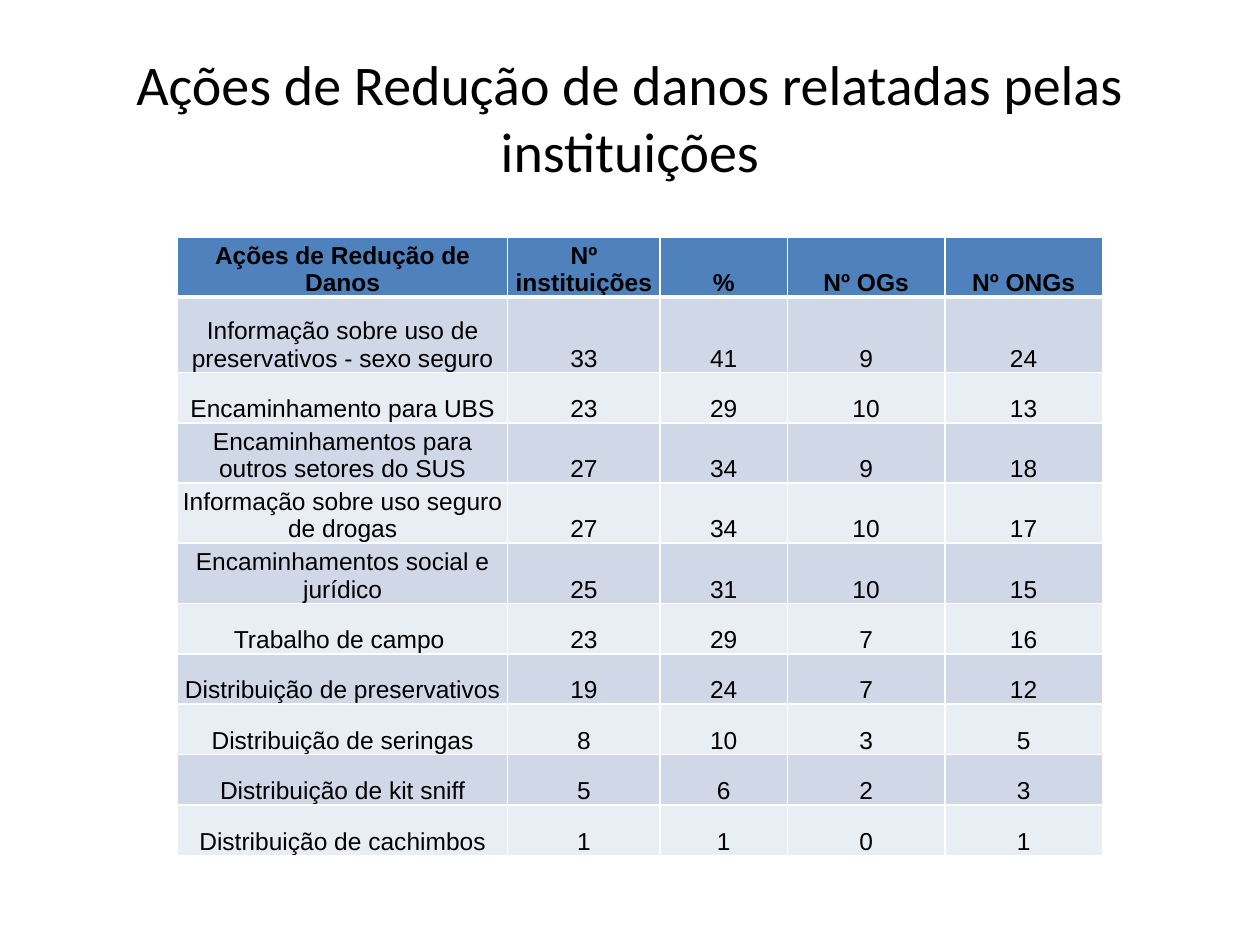
import pptx
import pptx.util
import pptx.dml.color
import pptx.enum.text
import pptx.oxml
import pptx.oxml.ns
from lxml import etree

Inches = pptx.util.Inches
Pt = pptx.util.Pt
RGBColor = pptx.dml.color.RGBColor
PP_ALIGN = pptx.enum.text.PP_ALIGN
MSO_ANCHOR = pptx.enum.text.MSO_ANCHOR
qn = pptx.oxml.ns.qn

BLACK = RGBColor(0x00, 0x00, 0x00)
WHITE = RGBColor(0xFF, 0xFF, 0xFF)
HEADER_BLUE = RGBColor(0x4F, 0x81, 0xBD)
BAND_DARK = RGBColor(0xD0, 0xD8, 0xE8)
BAND_LIGHT = RGBColor(0xE9, 0xED, 0xF4)

TITLE = "Ações de Redução de danos relatadas pelas instituições"
COLUMN_WIDTHS = [2.62, 1.21, 1.01, 1.25, 1.25]
ROW_HEIGHTS = [0.4, 0.6] + [0.4] * 9
ROWS = [
    ("Ações de Redução de Danos", "Nº instituições", "%", "Nº OGs", "Nº ONGs"),
    ("Informação sobre uso de preservativos - sexo seguro", 33, 41, 9, 24),
    ("Encaminhamento para UBS", 23, 29, 10, 13),
    ("Encaminhamentos para outros setores do SUS", 27, 34, 9, 18),
    ("Informação sobre uso seguro de drogas", 27, 34, 10, 17),
    ("Encaminhamentos social e jurídico", 25, 31, 10, 15),
    ("Trabalho de campo ", 23, 29, 7, 16),
    ("Distribuição de preservativos", 19, 24, 7, 12),
    ("Distribuição de seringas", 8, 10, 3, 5),
    ("Distribuição de kit sniff", 5, 6, 2, 3),
    ("Distribuição de cachimbos", 1, 1, 0, 1),
]


class SlideBuilder:
    title_font, title_size = "Calibri", 32
    table_font, table_size = "Arial", 14

    def __init__(self, slide):
        self.slide = slide

    def set_text(self, tf, text, font, size, bold=False):
        p = tf.paragraphs[0]
        p.text = text
        p.alignment = PP_ALIGN.CENTER
        p.font.name = font
        p.font.size = Pt(size)
        p.font.bold = bold
        p.font.color.rgb = BLACK

    def title(self, text, left, top, width, height):
        box = self.slide.shapes.add_textbox(
            Inches(left), Inches(top), Inches(width), Inches(height))
        tf = box.text_frame
        tf.word_wrap = True
        tf.vertical_anchor = MSO_ANCHOR.MIDDLE
        self.set_text(tf, text, self.title_font, self.title_size)

    def borders(self, cell, top, bottom):
        tcPr = cell._tc.get_or_add_tcPr()
        for tag, width in (("lnL", 1), ("lnR", 1), ("lnT", top), ("lnB", bottom)):
            ln = etree.SubElement(tcPr, qn(f"a:{tag}"), w=str(Pt(width)))
            fill = etree.SubElement(ln, qn("a:solidFill"))
            etree.SubElement(fill, qn("a:srgbClr"), val=str(WHITE))

    def cell(self, cell, text, row):
        header = row == 0
        cell.margin_left = cell.margin_right = cell.margin_top = Inches(0.01)
        cell.margin_bottom = 0
        cell.vertical_anchor = MSO_ANCHOR.BOTTOM
        self.borders(cell, 3 if row == 1 else 1, 3 if header else 1)
        cell.fill.solid()
        band = BAND_DARK if row % 2 else BAND_LIGHT
        cell.fill.fore_color.rgb = HEADER_BLUE if header else band
        self.set_text(cell.text_frame, text, self.table_font, self.table_size, header)

    def table(self, rows, left, top, widths, heights):
        table = self.slide.shapes.add_table(
            len(rows), len(widths), Inches(left), Inches(top),
            Inches(sum(widths)), Inches(sum(heights))).table
        for column, width in zip(table.columns, widths):
            column.width = Inches(width)
        for i, values in enumerate(rows):
            table.rows[i].height = Inches(heights[i])
            for j, value in enumerate(values):
                self.cell(table.cell(i, j), str(value), i)


def main():
    prs = pptx.Presentation()
    prs.slide_width = Inches(10)
    prs.slide_height = Inches(7.5)
    s = SlideBuilder(prs.slides.add_slide(prs.slide_layouts[6]))
    s.title(TITLE, 0.5, 0.3, 9, 1.25)
    s.table(ROWS, 1.41, 1.88, COLUMN_WIDTHS, ROW_HEIGHTS)
    prs.save("out.pptx")


if __name__ == "__main__":
    main()
